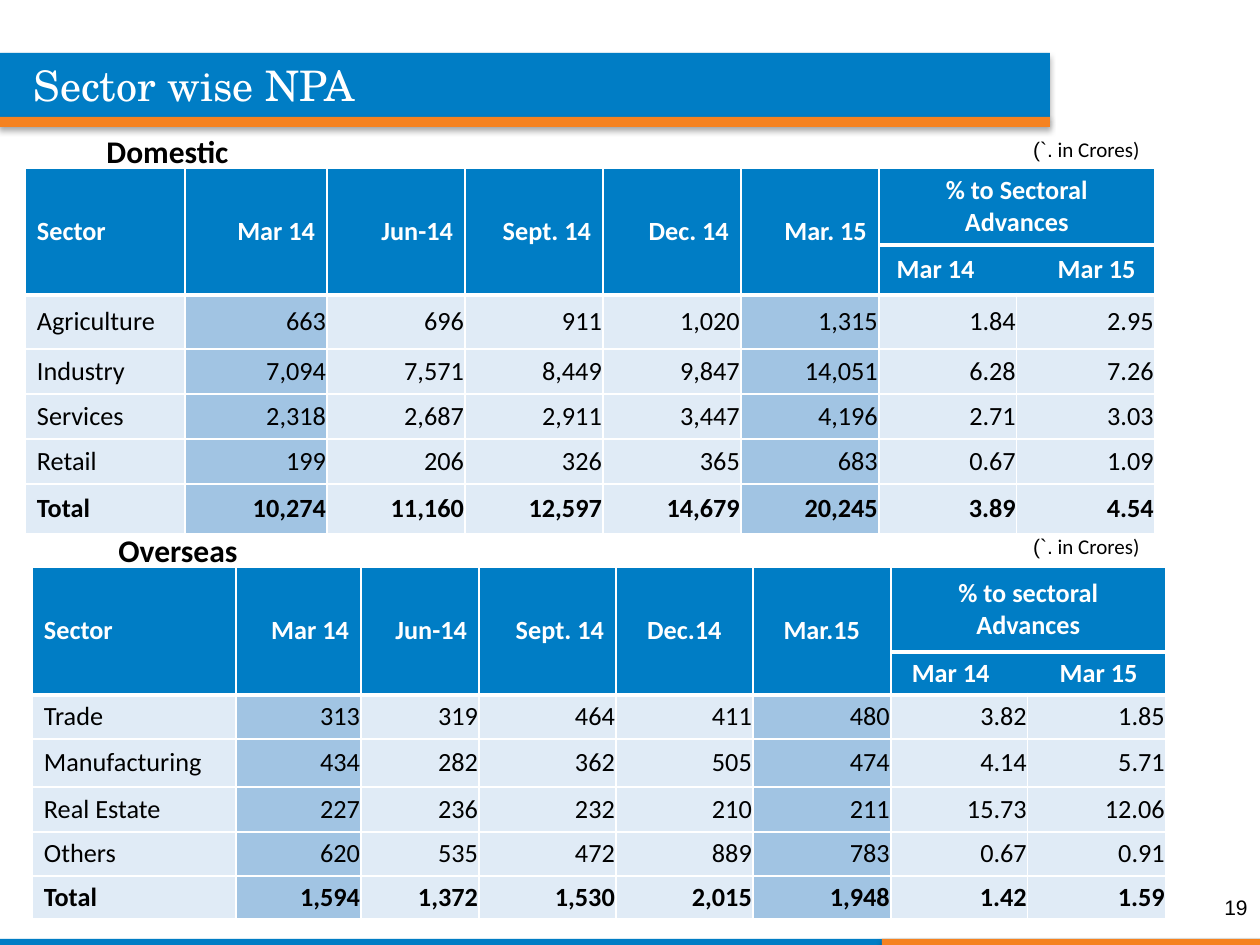
import dataclasses

import lxml.etree
import pptx
import pptx.dml.color
import pptx.enum.shapes
import pptx.enum.text
import pptx.oxml.ns
import pptx.util

EMU_PER_PX = 914400 // 126
ALIGN = pptx.enum.text.PP_ALIGN
ANCHOR = pptx.enum.text.MSO_ANCHOR


@dataclasses.dataclass(frozen=True)
class Theme:
    blue: str = "007DC5"
    orange: str = "F58220"
    pale: str = "E0EBF6"
    highlight: str = "A1C4E3"
    white: str = "FFFFFF"
    black: str = "000000"
    body_font: str = "Calibri"
    title_font: str = "TeX Gyre Schola"
    plain_font: str = "Arial"
    title_size: int = 24
    heading_size: int = 18
    table_size: int = 15
    note_size: int = 12


THEME = Theme()


@dataclasses.dataclass(frozen=True)
class SectorTable:
    left: int
    top: int
    widths: list
    heights: list
    periods: list
    period_aligns: list
    share_title: str
    share_indent: int
    share_tab: int
    rows: list


DOMESTIC = SectorTable(
    25, 168, [160, 142] + [138] * 6, [77, 50, 54, 45, 45, 45, 50],
    ["Mar 14", "Jun-14", "Sept. 14", "Dec. 14", "Mar. 15"], [ALIGN.RIGHT] * 5,
    "% to Sectoral Advances", 18, 161,
    [
        ["Agriculture", "663", "696", "911", "1,020", "1,315", "1.84", "2.95"],
        ["Industry", "7,094", "7,571", "8,449", "9,847", "14,051", "6.28", "7.26"],
        ["Services", "2,318", "2,687", "2,911", "3,447", "4,196", "2.71", "3.03"],
        ["Retail", "199", "206", "326", "365", "683", "0.67", "1.09"],
        ["Total", "10,274", "11,160", "12,597", "14,679", "20,245", "3.89", "4.54"],
    ],
)
OVERSEAS = SectorTable(
    32, 567, [204, 125, 118, 137, 137, 138, 137, 138], [85, 43, 44, 48, 45, 44, 43],
    ["Mar 14", "Jun-14", "Sept. 14", "Dec.14", "Mar.15"],
    [ALIGN.RIGHT] * 3 + [ALIGN.CENTER] * 2,
    "% to sectoral Advances", 21, 148,
    [
        ["Trade", "313", "319", "464", "411", "480", "3.82", "1.85"],
        ["Manufacturing", "434", "282", "362", "505", "474", "4.14", "5.71"],
        ["Real Estate", "227", "236", "232", "210", "211", "15.73", "12.06"],
        ["Others", "620", "535", "472", "889", "783", "0.67", "0.91"],
        ["Total", "1,594", "1,372", "1,530", "2,015", "1,948", "1.42", "1.59"],
    ],
)


def px(length):
    return pptx.util.Emu(length * EMU_PER_PX)


def rgb(color):
    return pptx.dml.color.RGBColor.from_string(color)


def add_element(parent, tag, **attributes):
    return lxml.etree.SubElement(parent, pptx.oxml.ns.qn(tag), attributes)


def format_run(run, font, size, color, bold=False):
    run.font.name = font
    run.font.size = pptx.util.Pt(size)
    run.font.color.rgb = rgb(color)
    run.font.bold = bold


def add_bar(slide, left, top, width, height, color):
    bar = slide.shapes.add_shape(
        pptx.enum.shapes.MSO_SHAPE.RECTANGLE, px(left), px(top), px(width), px(height))
    bar.fill.solid()
    bar.fill.fore_color.rgb = rgb(color)
    bar.line.fill.background()
    effects = add_element(bar.element.spPr, "a:effectLst")
    shadow = add_element(effects, "a:outerShdw", blurRad="44450", dist="27940",
                         dir="5400000", rotWithShape="0")
    shadow_color = add_element(shadow, "a:srgbClr", val=THEME.black)
    add_element(shadow_color, "a:alpha", val="32000")


def add_title(slide, text):
    title = slide.shapes.title
    title.left, title.top, title.width, title.height = px(21), px(53), px(851), px(63)
    frame = title.text_frame
    frame.text = text
    frame.auto_size = pptx.enum.text.MSO_AUTO_SIZE.NONE
    frame.vertical_anchor = ANCHOR.TOP
    paragraph = frame.paragraphs[0]
    paragraph.alignment = ALIGN.LEFT
    format_run(paragraph.runs[0], THEME.title_font, THEME.title_size, THEME.white)
    title.element.getparent().append(title.element)


def add_text(slide, left, top, width, height, parts, size, bold=False,
             align=ALIGN.LEFT, anchor=ANCHOR.TOP, wrap=True):
    box = slide.shapes.add_textbox(px(left), px(top), px(width), px(height))
    frame = box.text_frame
    frame.word_wrap = wrap
    frame.vertical_anchor = anchor
    paragraph = frame.paragraphs[0]
    paragraph.alignment = align
    for text, font in parts:
        run = paragraph.add_run()
        run.text = text
        format_run(run, font, size, THEME.black, bold)


def add_heading(slide, left, top, text):
    add_text(slide, left, top, 220, 50, [(text, THEME.body_font)], THEME.heading_size, bold=True)


def add_unit_note(slide, top):
    add_text(slide, 1008, top, 144, 38,
             [("(`.", THEME.plain_font), (" in Crores)", THEME.body_font)],
             THEME.note_size, align=ALIGN.RIGHT, wrap=False)


def style_cell(cell, row, fill):
    properties = cell._tc.get_or_add_tcPr()
    top = 3 if row in (1, 2) else 1
    bottom = 3 if row < 2 else 1
    for side, points in (("L", 1), ("R", 1), ("T", top), ("B", bottom)):
        line = add_element(properties, "a:ln" + side, w=str(pptx.util.Pt(points)))
        add_element(add_element(line, "a:solidFill"), "a:srgbClr", val=THEME.white)
    cell.fill.solid()
    cell.fill.fore_color.rgb = rgb(fill)
    cell.vertical_anchor = ANCHOR.MIDDLE
    cell.margin_top = cell.margin_bottom = px(5)


def write_cell(cell, text, color, bold, align=ALIGN.LEFT, margins=(12, 12), tab=None):
    cell.margin_left, cell.margin_right = px(margins[0]), px(margins[1])
    paragraph = cell.text_frame.paragraphs[0]
    paragraph.text = text
    paragraph.alignment = align
    if tab:
        stops = add_element(paragraph._p.get_or_add_pPr(), "a:tabLst")
        add_element(stops, "a:tab", pos=str(px(tab)), algn="l")
    for run in paragraph.runs:
        format_run(run, THEME.body_font, THEME.table_size, color, bold)


def add_sector_table(slide, data):
    frame = slide.shapes.add_table(
        len(data.heights), len(data.widths), px(data.left), px(data.top),
        px(sum(data.widths)), px(sum(data.heights)))
    table = frame.table
    table.first_row = table.horz_banding = False
    for column, width in zip(table.columns, data.widths):
        column.width = px(width)
    for row, height in zip(table.rows, data.heights):
        row.height = px(height)
    for row in range(len(data.heights)):
        for column in range(len(data.widths)):
            body_fill = THEME.highlight if column in (1, 5) else THEME.pale
            style_cell(table.cell(row, column), row, THEME.blue if row < 2 else body_fill)
    headers = ["Sector"] + data.periods
    aligns = [ALIGN.LEFT] + data.period_aligns
    for column, (text, align) in enumerate(zip(headers, aligns)):
        table.cell(0, column).merge(table.cell(1, column))
        write_cell(table.cell(0, column), text, THEME.white, True, align)
    for row in (0, 1):
        table.cell(row, 6).merge(table.cell(row, 7))
    write_cell(table.cell(0, 6), data.share_title, THEME.white, True, ALIGN.CENTER, (30, 30))
    write_cell(table.cell(1, 6), "Mar 14\tMar 15", THEME.white, True,
               margins=(data.share_indent, 0), tab=data.share_tab)
    for row, values in enumerate(data.rows, start=2):
        bold = values[0] == "Total"
        write_cell(table.cell(row, 0), values[0], THEME.black, bold)
        for column, value in enumerate(values[1:], start=1):
            write_cell(table.cell(row, column), value, THEME.black, bold, ALIGN.RIGHT, (1, 1))


def main():
    presentation = pptx.Presentation()
    presentation.slide_width, presentation.slide_height = px(1260), px(945)
    slide = presentation.slides.add_slide(presentation.slide_layouts[5])
    add_bar(slide, 0, 939, 1260, 6, THEME.blue)
    add_bar(slide, 882, 939, 378, 6, THEME.orange)
    add_bar(slide, 0, 53, 1050, 65, THEME.blue)
    add_bar(slide, 0, 117, 1050, 10, THEME.orange)
    add_title(slide, "Sector wise NPA")
    add_sector_table(slide, DOMESTIC)
    add_heading(slide, 94, 126, "Domestic")
    add_unit_note(slide, 130)
    add_sector_table(slide, OVERSEAS)
    add_heading(slide, 106, 525, "Overseas")
    add_unit_note(slide, 527)
    add_text(slide, 966, 882, 294, 50, [("19", THEME.plain_font)], THEME.note_size,
             align=ALIGN.RIGHT, anchor=ANCHOR.MIDDLE)
    presentation.save("out.pptx")


if __name__ == "__main__":
    main()
